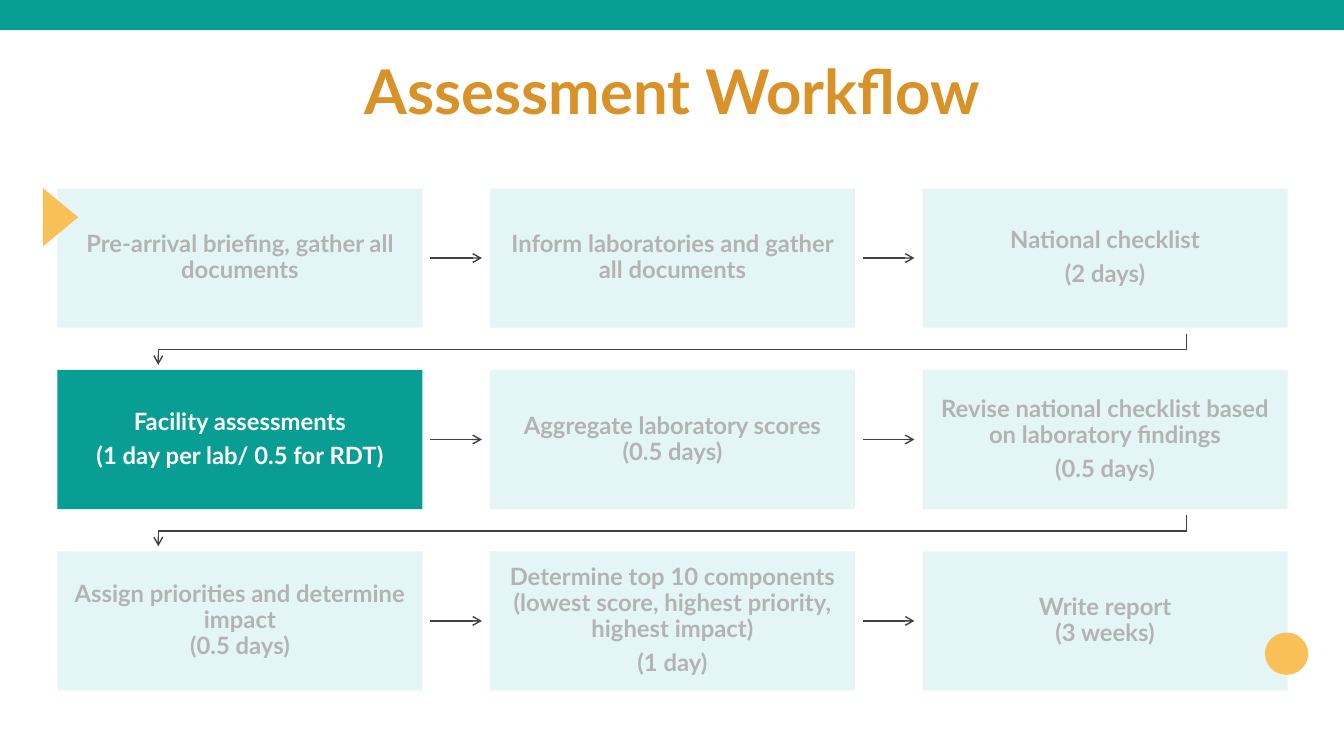
from lxml import etree
from pptx import Presentation
from pptx import util as u
from pptx.dml.color import RGBColor
from pptx.enum import shapes, text
from pptx.oxml import ns

TEAL = RGBColor(0x09, 0x9E, 0x93)
PALE_TEAL = RGBColor(0xE4, 0xF5, 0xF5)
AMBER = RGBColor(0xF8, 0xC0, 0x56)
OCHRE = RGBColor(0xD9, 0x92, 0x28)
GREY = RGBColor(0xB3, 0xB3, 0xB3)
CHARCOAL = RGBColor(0x41, 0x41, 0x41)
WHITE = RGBColor(0xFF, 0xFF, 0xFF)

LEFT, TOP = 0.57, 1.87
STEP_WIDTH, STEP_HEIGHT = 3.62, 1.38
COLUMN_PITCH, ROW_PITCH = 4.29, 1.8
ARROW_GAP = 0.08

# Each step: paragraphs, inner margin. A newline is a line break.
STEPS = [
    [
        (["Pre-arrival briefing, gather all documents"], 0.16),
        (["Inform laboratories and gather all documents"], 0.16),
        (["National checklist", "(2 days)"], 0.16),
    ],
    [
        (["Facility assessments", "(1 day per lab/ 0.5 for RDT)"], 0.08),
        (["Aggregate laboratory scores (0.5 days)"], 0.16),
        (["Revise national checklist based on laboratory findings", "(0.5 days)"], 0.16),
    ],
    [
        (["Assign priorities and determine impact\n(0.5 days)"], 0.16),
        (["Determine top 10 components (lowest score, highest priority, highest impact)",
          "(1 day)"], 0.04),
        (["Write report\n(3 weeks)"], 0.25),
    ],
]
CURRENT_STEP = (1, 0)


class WorkflowPage:
    font_name = "Lato"
    step_size = 17
    title_size = 44

    def __init__(self, deck):
        self.page = deck.slides.add_slide(deck.slide_layouts[5])

    def add_text(self, para, content, size, color):
        para.alignment = text.PP_ALIGN.CENTER
        para.line_spacing = 0.9
        for index, line in enumerate(content.split("\n")):
            if index:
                para.add_line_break()
            span = para.add_run()
            span.text = line
            span.font.name = self.font_name
            span.font.size = u.Pt(size)
            span.font.bold = True
            span.font.color.rgb = color

    def title(self, content, left, top, width, height):
        box = self.page.shapes.title
        box.left, box.top = u.Inches(left), u.Inches(top)
        box.width, box.height = u.Inches(width), u.Inches(height)
        frame = box.text_frame
        frame.word_wrap = True
        frame.auto_size = text.MSO_AUTO_SIZE.NONE
        frame.vertical_anchor = text.MSO_ANCHOR.MIDDLE
        self.add_text(frame.paragraphs[0], content, self.title_size, OCHRE)

    def block(self, kind, left, top, width, height, fill, rotation=0):
        box = self.page.shapes.add_shape(
            kind, u.Inches(left), u.Inches(top), u.Inches(width), u.Inches(height))
        box.shadow.inherit = False
        box.fill.solid()
        box.fill.fore_color.rgb = fill
        box.line.fill.background()
        box.rotation = rotation
        return box

    def step(self, left, top, paragraphs, margin, current):
        box = self.block(shapes.MSO_SHAPE.RECTANGLE, left, top, STEP_WIDTH, STEP_HEIGHT,
                         TEAL if current else PALE_TEAL)
        frame = box.text_frame
        frame.word_wrap = True
        frame.vertical_anchor = text.MSO_ANCHOR.MIDDLE
        frame.margin_left = frame.margin_right = u.Inches(margin)
        frame.margin_top = frame.margin_bottom = u.Inches(margin)
        for index, content in enumerate(paragraphs):
            para = frame.add_paragraph() if index else frame.paragraphs[0]
            self.add_text(para, content, self.step_size, WHITE if current else GREY)
            para.space_after = u.Pt(6)

    def arrow_line(self, shape):
        shape.line.color.rgb = CHARCOAL
        shape.line.width = u.Pt(1)
        outline = shape._element.spPr.get_or_add_ln()
        etree.SubElement(outline, ns.qn("a:tailEnd"), type="arrow")

    def arrow(self, start, end, y):
        line = self.page.shapes.add_connector(
            shapes.MSO_CONNECTOR.STRAIGHT,
            u.Inches(start), u.Inches(y), u.Inches(end), u.Inches(y))
        self.arrow_line(line)
        etree.SubElement(line._element.spPr, ns.qn("a:effectLst"))

    def return_arrow(self, start, end, top, middle, bottom):
        """Draw the bent arrow from the end of one row to the start of the next."""
        points = [(u.Inches(x), u.Inches(y)) for x, y in
                  [(start, top), (start, middle), (end, middle), (end, bottom)]]
        builder = self.page.shapes.build_freeform(*points[0])
        builder.add_line_segments(points[1:], close=False)
        route = builder.convert_to_shape()
        route.shadow.inherit = False
        route.fill.background()
        self.arrow_line(route)


def main():
    deck = Presentation()
    deck.slide_width, deck.slide_height = u.Inches(13.33), u.Inches(7.5)
    workflow = WorkflowPage(deck)
    workflow.block(shapes.MSO_SHAPE.RECTANGLE, 0, 0, 13.33, 0.3, TEAL)
    workflow.title("Assessment Workflow", 0.92, 0.21, 11.5, 1.45)

    for row, steps in enumerate(STEPS):
        top = TOP + row * ROW_PITCH
        bottom = top + STEP_HEIGHT
        for column, (paragraphs, margin) in enumerate(steps):
            left = LEFT + column * COLUMN_PITCH
            workflow.step(left, top, paragraphs, margin, (row, column) == CURRENT_STEP)
            if column < len(steps) - 1:
                workflow.arrow(left + STEP_WIDTH + ARROW_GAP,
                               left + COLUMN_PITCH - ARROW_GAP, top + STEP_HEIGHT / 2)
        if row < len(STEPS) - 1:
            workflow.return_arrow(11.77, 1.57, bottom + 0.06, bottom + 0.22, bottom + 0.37)

    workflow.block(shapes.MSO_SHAPE.ISOSCELES_TRIANGLE, 0.31, 1.98, 0.58, 0.35, AMBER, 90)
    workflow.block(shapes.MSO_SHAPE.OVAL, 12.55, 6.27, 0.42, 0.43, AMBER, 90)
    deck.save("out.pptx")


if __name__ == "__main__":
    main()
